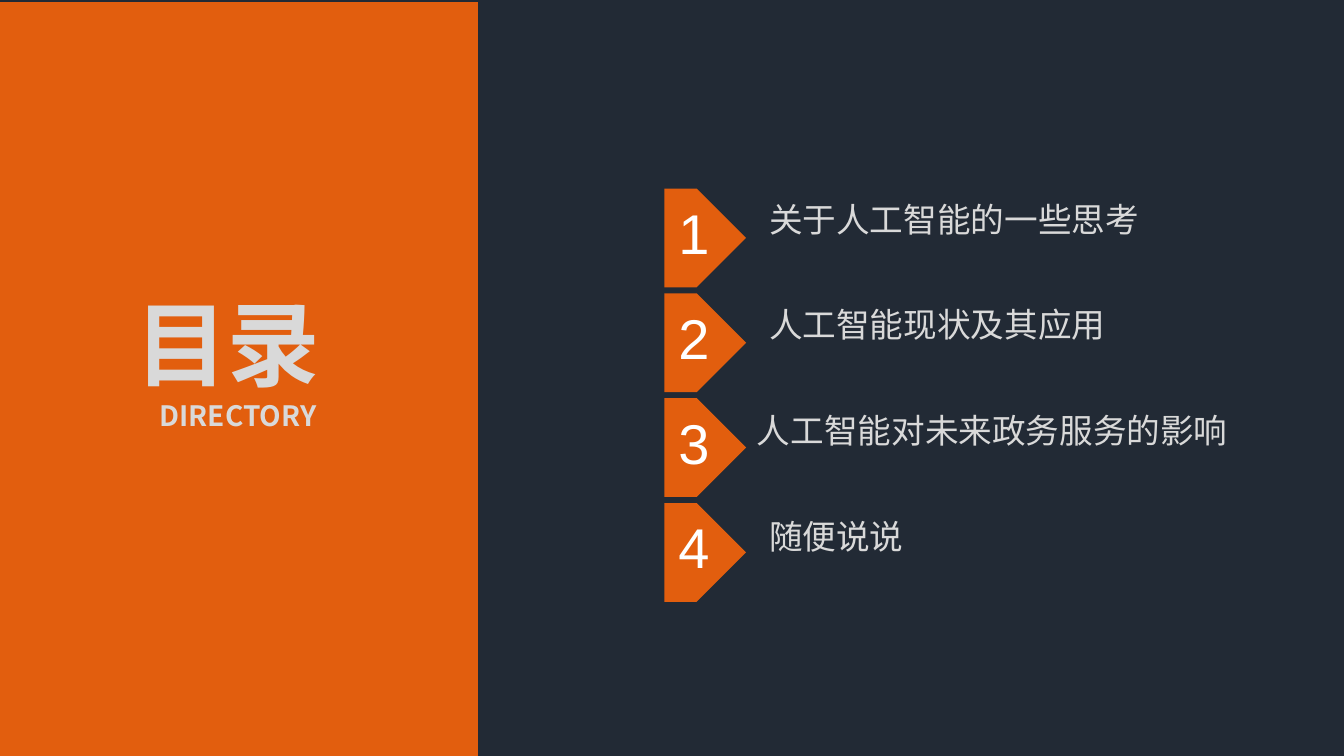
import pptx
import pptx.dml.color
import pptx.enum.shapes
import pptx.enum.text
import pptx.oxml.ns
import pptx.util
from lxml import etree

Inches = pptx.util.Inches
Pt = pptx.util.Pt
RGBColor = pptx.dml.color.RGBColor

NAVY = RGBColor(0x22, 0x2A, 0x35)
ORANGE = RGBColor(0xE2, 0x5E, 0x0E)
LIGHT_GREY = RGBColor(0xD9, 0xD9, 0xD9)
WHITE = RGBColor(0xFF, 0xFF, 0xFF)
CJK_FONT = "Noto Sans CJK SC"

TOPICS = [
    (7.53, 4.51, "关于人工智能的一些思考"),
    (7.53, 4.72, "人工智能现状及其应用"),
    (7.41, 5.07, "人工智能对未来政务服务的影响"),
    (7.53, 3.09, "随便说说"),
]


def paint(shape, color):
    shape.shadow.inherit = False
    shape.fill.solid()
    shape.fill.fore_color.rgb = color
    shape.line.fill.background()


def set_font(font, name, color):
    font.color.rgb = color
    font.name = name
    east_asian = etree.SubElement(font._element, pptx.oxml.ns.qn("a:ea"))
    east_asian.set("typeface", name)


def add_text(slide, left, top, width, height, text, size, name, color, wrap=True):
    box = slide.shapes.add_textbox(Inches(left), Inches(top), Inches(width), Inches(height))
    box.text_frame.word_wrap = wrap
    paragraph = box.text_frame.paragraphs[0]
    paragraph.text = text
    paragraph.font.size = Pt(size)
    set_font(paragraph.font, name, color)


def add_marker(slide, top):
    left, shoulder, tip, half = 6.59, 6.91, 7.4, 0.49
    outline = slide.shapes.build_freeform(Inches(left), Inches(top))
    corners = [
        (shoulder, top),
        (tip, top + half),
        (shoulder, top + 2 * half),
        (left, top + 2 * half),
    ]
    outline.add_line_segments([(Inches(x), Inches(y)) for x, y in corners])
    paint(outline.convert_to_shape(), ORANGE)


def add_title_panel(slide):
    panel = slide.shapes.add_shape(
        pptx.enum.shapes.MSO_SHAPE.RECTANGLE,
        Inches(0), Inches(0.02), Inches(4.74), Inches(7.48),
    )
    paint(panel, ORANGE)

    title_box = slide.shapes.add_textbox(Inches(0.58), Inches(2.27), Inches(3.56), Inches(2.59))
    title_box.text_frame.word_wrap = True
    title_box.text_frame.vertical_anchor = pptx.enum.text.MSO_ANCHOR.MIDDLE
    paragraph = title_box.text_frame.paragraphs[0]
    paragraph.alignment = pptx.enum.text.PP_ALIGN.CENTER
    paragraph.font.bold = True
    set_font(paragraph.font, CJK_FONT, LIGHT_GREY)
    title = paragraph.add_run()
    title.text = "目录 "
    title.font.size = Pt(66)
    paragraph.add_line_break()
    subtitle = paragraph.add_run()
    subtitle.text = "DIRECTORY"
    subtitle.font.size = Pt(20)


def main():
    presentation = pptx.Presentation()
    presentation.slide_width = Inches(13.33)
    presentation.slide_height = Inches(7.5)
    slide = presentation.slides.add_slide(presentation.slide_layouts[6])
    slide.background.fill.solid()
    slide.background.fill.fore_color.rgb = NAVY

    for index, (left, width, topic) in enumerate(TOPICS):
        add_text(slide, left, 1.92 + 1.05 * index, width, 0.5, topic, 24, CJK_FONT, LIGHT_GREY)
        add_marker(slide, 1.87 + 1.04 * index)
        add_text(slide, 6.63, 1.92 + 1.04 * index, 0.48, 0.9,
                 str(index + 1), 40, "Arial", WHITE, wrap=False)
    add_title_panel(slide)

    presentation.save("out.pptx")


if __name__ == "__main__":
    main()
